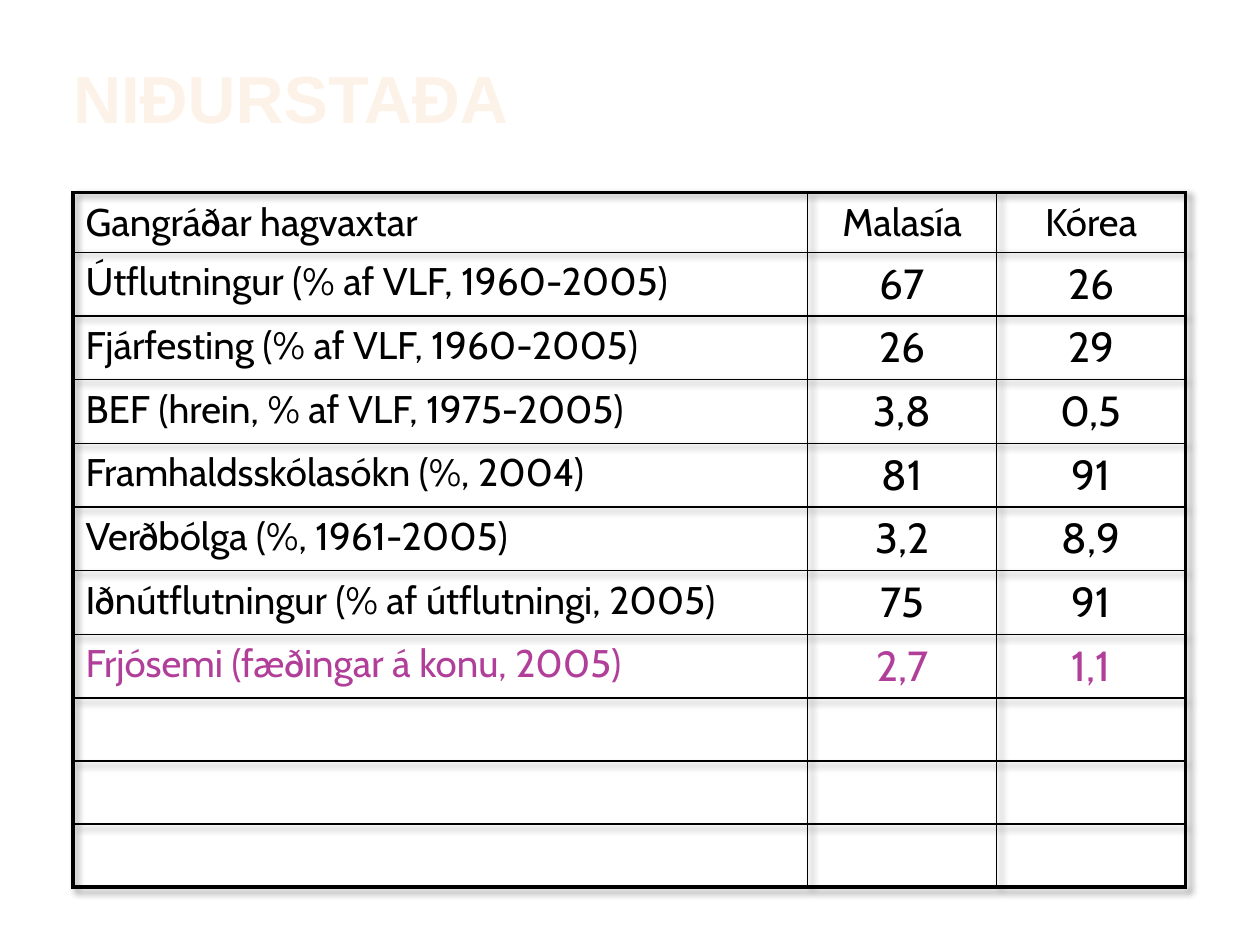
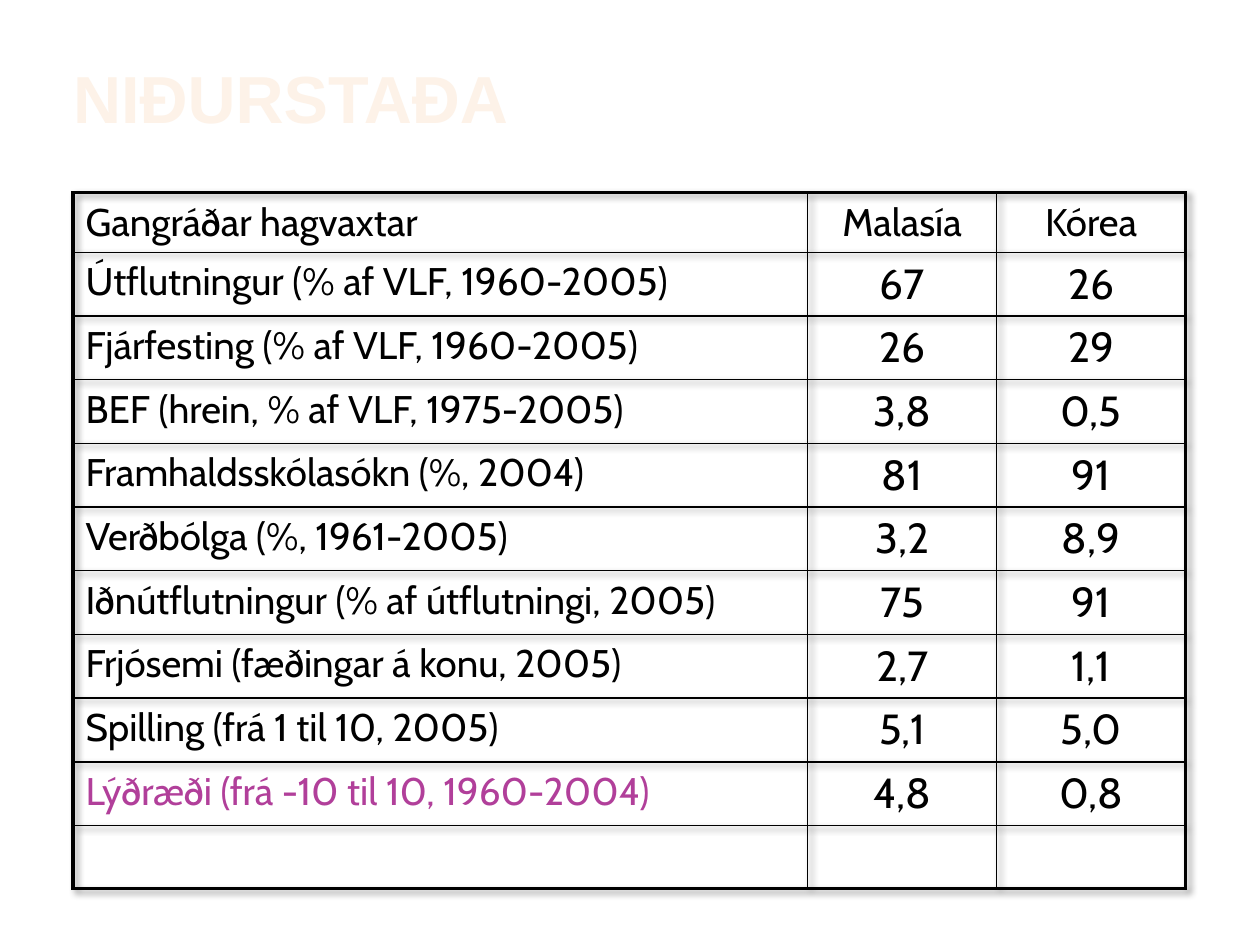
from typing import Any, NamedTuple

import lxml.etree
import pptx
import pptx.dml.color
import pptx.enum.text
import pptx.oxml
import pptx.oxml.ns
import pptx.util

Inches = pptx.util.Inches
Pt = pptx.util.Pt
Align = pptx.enum.text.PP_ALIGN

COLORS = {"title": "FDF2E8", "ink": "000000", "hot": "B13F9A"}
TITLE = {"name": "Arial", "size": Pt(38), "bold": True}
LABEL = {"name": "Cabin", "size": Pt(22)}
VALUE = {"name": "Cabin", "size": Pt(24)}
FRAME = {
    "margin_left": 0, "margin_right": 0, "margin_top": 0, "margin_bottom": 0,
    "vertical_anchor": pptx.enum.text.MSO_ANCHOR.TOP,
    "auto_size": pptx.enum.text.MSO_AUTO_SIZE.NONE,
}
PLAIN = {"first_row": False, "horz_banding": False}

LEFT = Inches(0.58)
WIDTHS = [Inches(w) for w in (5.83, 1.5, 1.5)]
HEAD, ROW = Inches(0.47), Inches(0.5)
THIN, THICK = Pt(1), Pt(2.25)


class Factor(NamedTuple):
    label: str
    first: str
    second: str


class Stage(NamedTuple):
    shown: int  # factors revealed so far
    hot: int  # highlighted columns of the newest factor


TOPIC = Factor("Gangráðar hagvaxtar", "Malasía", "Kórea")
FACTORS = [
    Factor("Útflutningur (% af VLF, 1960-2005)", "67", "26"),
    Factor("Fjárfesting (% af VLF, 1960-2005)", "26", "29"),
    Factor("BEF (hrein, % af VLF, 1975-2005)", "3,8", "0,5"),
    Factor("Framhaldsskólasókn (%, 2004)", "81", "91"),
    Factor("Verðbólga (%, 1961-2005)", "3,2", "8,9"),
    Factor("Iðnútflutningur (% af útflutningi, 2005)", "75", "91"),
    Factor("Frjósemi (fæðingar á konu, 2005)", "2,7", "1,1"),
    Factor("Spilling (frá 1 til 10, 2005)", "5,1", "5,0"),
    Factor("Lýðræði (frá -10 til 10, 1960-2004)", "4,8", "0,8"),
]
STAGES = [Stage(7, 3), Stage(9, 1)]
ROWS = 11


def apply(target: Any, values: dict[str, Any]) -> None:
    for name, value in values.items():
        setattr(target, name, value)


def write(para: Any, text: str, font: dict[str, Any], color: str) -> None:
    run = para.add_run()
    run.text = text
    apply(run.font, font)
    run.font.color.rgb = pptx.dml.color.RGBColor.from_string(COLORS[color])


def add_title(slide: Any) -> None:
    title = slide.shapes.title
    apply(title, {"left": LEFT, "top": Inches(0.45),
                  "width": sum(WIDTHS), "height": Inches(0.65)})
    apply(title.text_frame, FRAME)
    para = title.text_frame.paragraphs[0]
    para.alignment = Align.LEFT
    write(para, "NIÐURSTAÐA", TITLE, "title")


def set_edges(cell: Any, row: int, col: int) -> None:
    """Draw thin cell borders, thick where they meet the table's rim."""
    rim = {"L": col == 0, "R": col == len(WIDTHS) - 1,
           "T": row == 0, "B": row == ROWS - 1}
    props = cell._tc.get_or_add_tcPr()
    for place, (side, outer) in enumerate(rim.items()):
        width = THICK if outer else THIN
        props.insert(place, pptx.oxml.parse_xml(
            f'<a:ln{side} {pptx.oxml.ns.nsdecls("a")} w="{width}"><a:solidFill>'
            f'<a:srgbClr val="{COLORS["ink"]}"/></a:solidFill></a:ln{side}>'))


def add_shadow(table: Any) -> None:
    props = table._tbl.tblPr
    effects = lxml.etree.Element(pptx.oxml.ns.qn("a:effectLst"))
    shadow = lxml.etree.SubElement(
        effects, pptx.oxml.ns.qn("a:outerShdw"),
        blurRad=str(Pt(4)), dist=str(Pt(3)), dir="2700000")
    color = lxml.etree.SubElement(
        shadow, pptx.oxml.ns.qn("a:srgbClr"), val=COLORS["ink"])
    lxml.etree.SubElement(color, pptx.oxml.ns.qn("a:alpha"), val="40000")
    props.insert(0, effects)


def add_grid(slide: Any, stage: Stage) -> None:
    table = slide.shapes.add_table(
        ROWS, len(WIDTHS), LEFT, Inches(1.53),
        sum(WIDTHS), HEAD + ROW * (ROWS - 1)).table
    apply(table, PLAIN)
    add_shadow(table)
    for column, width in zip(table.columns, WIDTHS):
        column.width = width
    lines = [TOPIC, *FACTORS[:stage.shown]]
    for row in range(ROWS):
        table.rows[row].height = ROW if row else HEAD
        for col in range(len(WIDTHS)):
            cell = table.cell(row, col)
            set_edges(cell, row, col)
            cell.fill.background()
            if row < len(lines):
                para = cell.text_frame.paragraphs[0]
                para.alignment = Align.CENTER if col else Align.LEFT
                hot = row == stage.shown and col < stage.hot
                write(para, lines[row][col], VALUE if row and col else LABEL,
                      "hot" if hot else "ink")


def main() -> None:
    deck = pptx.Presentation()
    apply(deck, {"slide_width": Inches(10), "slide_height": Inches(7.5)})
    for stage in STAGES:
        slide = deck.slides.add_slide(deck.slide_layouts[5])
        add_title(slide)
        add_grid(slide, stage)
    deck.save("out.pptx")


if __name__ == "__main__":
    main()
